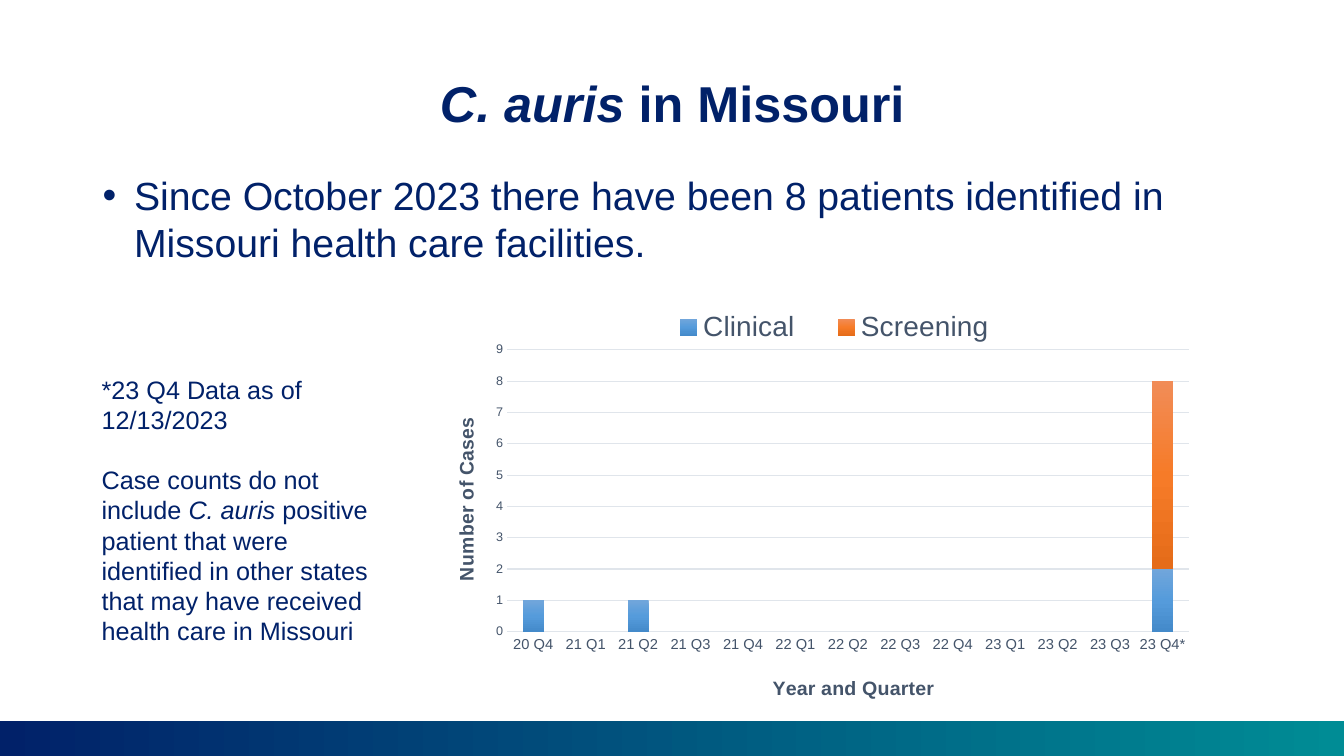
from lxml import etree
from pptx import Presentation
from pptx import util as u
from pptx.chart import data
from pptx.dml import color
from pptx.enum import chart as kinds
from pptx.enum import shapes, text
from pptx.oxml import ns

COLORS = {"navy": "012169", "teal": "008C95", "slate": "44546A", "grid": "E0E5EB"}
CLINICAL = ["71A6DB", "559BDB", "448ACA"]
SCREENING = ["F18C57", "F67B28", "E56C19"]
QUARTERS = ["20 Q4"] + [f"{year} Q{quarter}" for year in (21, 22, 23) for quarter in range(1, 5)]
QUARTERS[-1] += "*"


def rgb(value):
    return color.RGBColor.from_string(value)


def style_font(font, size, name="Arial", ink="navy", bold=False, italic=False):
    font.name, font.size = name, u.Pt(size)
    font.bold, font.italic = bold, italic
    font.color.rgb = rgb(COLORS[ink])


def add_text(para, content, **style):
    span = para.add_run()
    span.text = content
    style_font(span.font, **style)


def fill_gradient(fill, element, stops, angle):
    fill.gradient()
    fill.gradient_angle = angle
    stop_list = next(element.iter(ns.qn("a:gsLst")))
    for stop in list(stop_list):
        stop_list.remove(stop)
    for index, value in enumerate(stops):
        position = str(100000 * index // (len(stops) - 1))
        stop = etree.SubElement(stop_list, ns.qn("a:gs"), pos=position)
        etree.SubElement(stop, ns.qn("a:srgbClr"), val=value)


def place(element, x, y, width=None, height=None, inner=False):
    for old in element.findall(ns.qn("c:layout")):
        element.remove(old)
    layout = etree.Element(ns.qn("c:layout"))
    manual = etree.SubElement(layout, ns.qn("c:manualLayout"))
    settings = [("layoutTarget", "inner")] if inner else []
    settings += [("xMode", "edge"), ("yMode", "edge"), ("x", x), ("y", y)]
    if width:
        settings += [("w", width), ("h", height)]
    for tag, value in settings:
        etree.SubElement(manual, ns.qn(f"c:{tag}"), val=str(value))
    before = [element.find(ns.qn(f"c:{tag}")) for tag in ("tx", "legendPos")]
    anchor = next((item for item in before if item is not None), None)
    if anchor is None:
        element.insert(0, layout)
    else:
        anchor.addnext(layout)


class SlideBuilder:
    def __init__(self, page, size=18):
        self.page = page
        self.size = size

    def text(self, frame, paragraphs, size=None, align=text.PP_ALIGN.LEFT,
             anchor=text.MSO_ANCHOR.TOP, spacing=1.0, gap=0, bold=False, bullet=None):
        box = self.page.shapes.add_textbox(*map(u.Pt, frame)).text_frame
        box.word_wrap = True
        box.vertical_anchor = anchor
        for index, spans in enumerate(paragraphs):
            para = box.add_paragraph() if index else box.paragraphs[0]
            para.alignment, para.line_spacing = align, spacing
            para.space_before = u.Pt(gap if index else 0)
            for content, italic in spans:
                add_text(para, content, size=size or self.size, bold=bold, italic=italic)
            if bullet:
                props = para._p.get_or_add_pPr()
                props.set("marL", str(u.Pt(22.5)))
                props.set("indent", str(-u.Pt(22.5)))
                etree.SubElement(props, ns.qn("a:buFont"), typeface="Arial")
                etree.SubElement(props, ns.qn("a:buChar"), char=bullet)

    def band(self, frame, stops):
        band = self.page.shapes.add_shape(shapes.MSO_SHAPE.RECTANGLE, *map(u.Pt, frame))
        band.shadow.inherit = False
        band.line.fill.background()
        fill_gradient(band.fill, band._element, stops, 0)

    def axis(self, axis, title, title_at, size):
        axis.has_title = True
        add_text(axis.axis_title.text_frame.paragraphs[0], title,
                 size=14, ink="slate", bold=True)
        place(axis.axis_title._element, *title_at)
        axis.major_tick_mark = axis.minor_tick_mark = kinds.XL_TICK_MARK.NONE
        style_font(axis.tick_labels.font, size, ink="slate")

    def rule(self, line):
        line.color.rgb = rgb(COLORS["grid"])
        line.width = u.Pt(0.75)

    def stacked_chart(self, frame, categories, series):
        table = data.CategoryChartData()
        table.categories = categories
        for name, values, _ in series:
            table.add_series(name, values)
        chart = self.page.shapes.add_chart(
            kinds.XL_CHART_TYPE.COLUMN_STACKED, *map(u.Pt, frame), table).chart
        chart.has_title = False
        style_font(chart.font, 10, ink="slate")
        plot = chart.plots[0]
        plot.gap_width, plot.overlap, plot.vary_by_categories = 150, 100, False
        for bars, (_, _, stops) in zip(plot.series, series):
            fill_gradient(bars.format.fill, bars._element, stops, 270)
        self.axis(chart.category_axis, "Year and Quarter", (0.41, 0.93), 10.5)
        self.rule(chart.category_axis.format.line)
        values_axis = chart.value_axis
        self.axis(values_axis, "Number of Cases", (0.02, 0.29), 9)
        values_axis.minimum_scale, values_axis.maximum_scale = 0, 9
        values_axis.major_unit = 1
        values_axis.format.line.fill.background()
        self.rule(values_axis.major_gridlines.format.line)
        chart.has_legend = True
        chart.legend.position = kinds.XL_LEGEND_POSITION.BOTTOM
        chart.legend.include_in_layout = False
        style_font(chart.legend.font, 20, ink="slate")
        place(chart.legend._element, 0.26, 0.02, 0.46, 0.1)
        place(next(chart._chartSpace.iter(ns.qn("c:plotArea"))),
              0.09, 0.126, 0.833, 0.703, inner=True)


def main():
    deck = Presentation()
    deck.slide_width, deck.slide_height = u.Pt(960), u.Pt(540)
    slide = SlideBuilder(deck.slides.add_slide(deck.slide_layouts[6]))
    slide.text((60.5, 36, 839.5, 62.6), [[("C. auris ", True), ("in Missouri", False)]],
               size=36, align=text.PP_ALIGN.CENTER, anchor=text.MSO_ANCHOR.BOTTOM,
               spacing=0.9, bold=True)
    slide.text((66.2, 118.8, 828, 75), [[(
        "Since October 2023 there have been 8 patients identified in "
        "Missouri health care facilities.", False)]], size=28, bullet="•")
    slide.band((0, 515.3, 960, 24.7), [COLORS["navy"], COLORS["teal"]])
    empty = [None] * 10
    slide.stacked_chart((309.6, 213.8, 584.6, 290.2), QUARTERS, [
        ("Clinical", [1, None, 1, *empty[1:], 2], CLINICAL),
        ("Screening", [None, None, *empty, 6], SCREENING)])
    slide.text((65.5, 263.5, 222.5, 203.8), [
        [("*23 Q4 Data as of 12/13/2023", False)],
        [("Case counts do not include ", False), ("C. auris ", True),
         ("positive patient that were identified in other states that may have "
          "received health care in Missouri", False)]], gap=21.6)
    deck.save("out.pptx")


if __name__ == "__main__":
    main()
